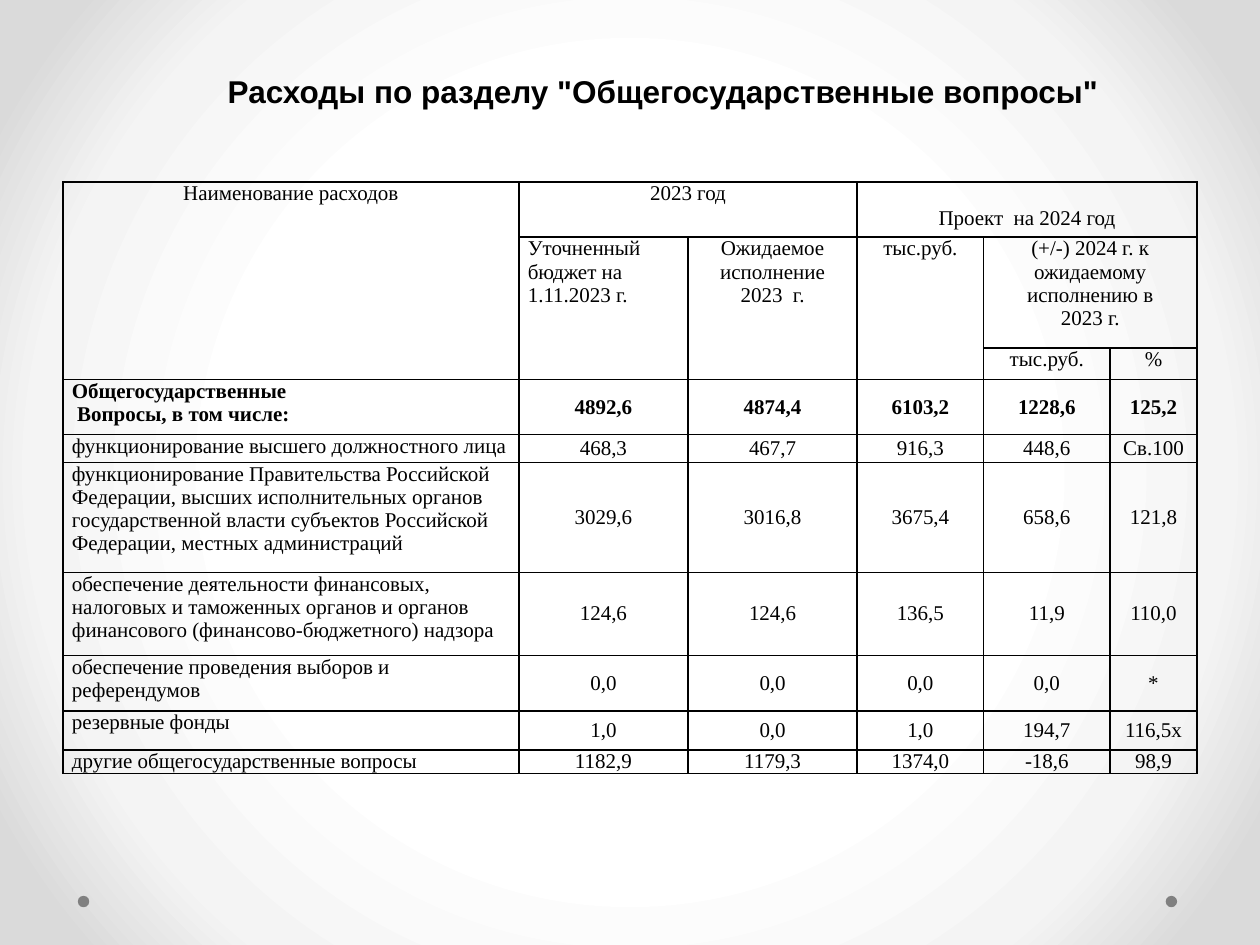
from lxml.etree import SubElement, fromstring
from pptx import Presentation
from pptx.dml.color import RGBColor
from pptx.enum.shapes import MSO_SHAPE as Shape
from pptx.enum.text import MSO_ANCHOR as Anchor, MSO_AUTO_SIZE as AutoSize, PP_ALIGN as Align
from pptx.oxml.ns import nsdecls, qn
from pptx.util import Cm, Pt

# Content
TITLE = 'Расходы по разделу "Общегосударственные вопросы"'
# (row, column, rows spanned, columns spanned, text)
HEADERS = [
    (0, 0, 3, 1, "Наименование расходов"),
    (0, 1, 1, 2, "2023 год"),
    (0, 3, 1, 3, "Проект  на 2024 год"),
    (1, 1, 2, 1, "Уточненный бюджет на 1.11.2023 г."),
    (1, 2, 2, 1, "Ожидаемое\nисполнение\n2023  г."),
    (1, 3, 2, 1, "тыс.руб."),
    (1, 4, 1, 2, "(+/-) 2024 г. к ожидаемому\nисполнению в\n2023 г."),
    (2, 4, 1, 1, "тыс.руб."),
    (2, 5, 1, 1, "%"),
]
EXPENSES = [
    ("Общегосударственные\n Вопросы, в том числе:",
     "4892,6", "4874,4", "6103,2", "1228,6", "125,2"),
    ("функционирование высшего должностного лица",
     "468,3", "467,7", "916,3", "448,6", "Св.100"),
    ("функционирование Правительства Российской Федерации, высших исполнительных органов "
     "государственной власти субъектов Российской Федерации, местных администраций",
     "3029,6", "3016,8", "3675,4", "658,6", "121,8"),
    ("обеспечение деятельности финансовых, налоговых и таможенных органов и органов "
     "финансового (финансово-бюджетного) надзора",
     "124,6", "124,6", "136,5", "11,9", "110,0"),
    ("обеспечение проведения выборов и референдумов", "0,0", "0,0", "0,0", "0,0", "*"),
    ("резервные фонды", "1,0", "0,0", "1,0", "194,7", "116,5х"),
    ("другие общегосударственные вопросы", "1182,9", "1179,3", "1374,0", "-18,6", "98,9"),
]
HEADER_ROWS = 3
COLUMN_WIDTHS = [9.19, 3.41, 3.41, 2.55, 2.55, 1.75]
ROW_HEIGHTS = [1.11, 2.24, 0.63, 1.11, 0.56, 2.22, 1.67, 1.12, 0.79, 0.4]
BACKGROUND_STOPS = [(50, "FFFFFF"), (76, "F4F4F4"), (92, "DADADA")]
DOT_LEFTS = [1.57, 23.5]

TITLE_FONT = {"name": "Arial", "size": Pt(18), "bold": True}
TAB_FONT = {"name": "Vollkorn", "size": Pt(14), "bold": True}
CELL_FONT = {"name": "Times New Roman", "size": Pt(12)}
CELL_MARGINS = {"margin_left": Cm(0.18), "margin_right": Cm(0.18),
                "margin_top": 0, "margin_bottom": 0}


def rgb(color):
    return RGBColor.from_string(color)


def apply(target, formats):
    for attribute, value in formats.items():
        setattr(target, attribute, value)


def style_font(font, formats, color="000000"):
    apply(font, formats)
    font.color.rgb = rgb(color)


def set_background(slide):
    stops = "".join(f'<a:gs pos="{pos * 1000}"><a:srgbClr val="{color}"/></a:gs>'
                    for pos, color in BACKGROUND_STOPS)
    background = fromstring(
        f'<p:bg {nsdecls("p", "a")}><p:bgPr><a:gradFill rotWithShape="1"><a:gsLst>{stops}</a:gsLst>'
        '<a:path path="circle"><a:fillToRect l="50000" t="50000" r="50000" b="50000"/></a:path>'
        '</a:gradFill><a:effectLst/></p:bgPr></p:bg>')
    slide.element.cSld.insert(0, background)


def add_borders(cell, color="000000", width=Pt(1)):
    properties = cell._tc.get_or_add_tcPr()
    for position, side in enumerate(("lnL", "lnR", "lnT", "lnB")):
        line = SubElement(properties, qn(f"a:{side}"), w=str(width))
        SubElement(SubElement(line, qn("a:solidFill")), qn("a:srgbClr"), val=color)
        properties.insert(position, line)  # borders precede the fill


def write_cell(cell, text, align=Align.CENTER, anchor=Anchor.TOP, bold=False):
    cell.text = text
    cell.vertical_anchor = anchor
    for paragraph in cell.text_frame.paragraphs:
        paragraph.alignment = align
        for run in paragraph.runs:
            style_font(run.font, {**CELL_FONT, "bold": bold})


prs = Presentation()
apply(prs, {"slide_width": Cm(25.4), "slide_height": Cm(19.05)})
slide = prs.slides.add_slide(prs.slide_layouts[5])
set_background(slide)

# Corner dots
for left in DOT_LEFTS:
    dot = slide.shapes.add_shape(Shape.OVAL, Cm(left), Cm(18.06), Cm(0.23), Cm(0.23))
    dot.shadow.inherit = False
    dot.fill.solid()
    dot.fill.fore_color.rgb = rgb("808080")
    dot.line.fill.background()

# Title, moved right of centre by its leading tab
title = slide.shapes.title
apply(title, {"left": Cm(1.3), "top": Cm(0.74), "width": Cm(22.86), "height": Cm(1.6)})
apply(title.text_frame, {"vertical_anchor": Anchor.BOTTOM, "word_wrap": True,
                         "auto_size": AutoSize.NONE})
heading = title.text_frame.paragraphs[0]
heading.alignment = Align.CENTER
for text, formats in (("\t", TAB_FONT), (TITLE, TITLE_FONT)):
    run = heading.add_run()
    run.text = text
    style_font(run.font, formats)

# Table grid
table = slide.shapes.add_table(len(ROW_HEIGHTS), len(COLUMN_WIDTHS), Cm(1.27), Cm(3.67),
                               Cm(sum(COLUMN_WIDTHS)), Cm(sum(ROW_HEIGHTS))).table
apply(table, {"first_row": False, "horz_banding": False})
for column, width in zip(table.columns, COLUMN_WIDTHS):
    column.width = Cm(width)
for row, height in zip(table.rows, ROW_HEIGHTS):
    row.height = Cm(height)
for cell in table.iter_cells():
    apply(cell, CELL_MARGINS)
    cell.fill.background()
    add_borders(cell)
    style_font(cell.text_frame.paragraphs[0].font, CELL_FONT)

# Header cells
for row, column, row_span, column_span, text in HEADERS:
    cell = table.cell(row, column)
    if row_span * column_span > 1:
        cell.merge(table.cell(row + row_span - 1, column + column_span - 1))
    write_cell(cell, text, Align.LEFT if (row, column) == (1, 1) else Align.CENTER)
table.cell(0, 3).margin_top = Cm(0.49)

# Expense rows, the total in bold
for row, (expense, *amounts) in enumerate(EXPENSES, HEADER_ROWS):
    bold = row == HEADER_ROWS
    write_cell(table.cell(row, 0), expense, Align.LEFT, bold=bold)
    for column, amount in enumerate(amounts, 1):
        write_cell(table.cell(row, column), amount, anchor=Anchor.MIDDLE, bold=bold)

prs.save("out.pptx")
